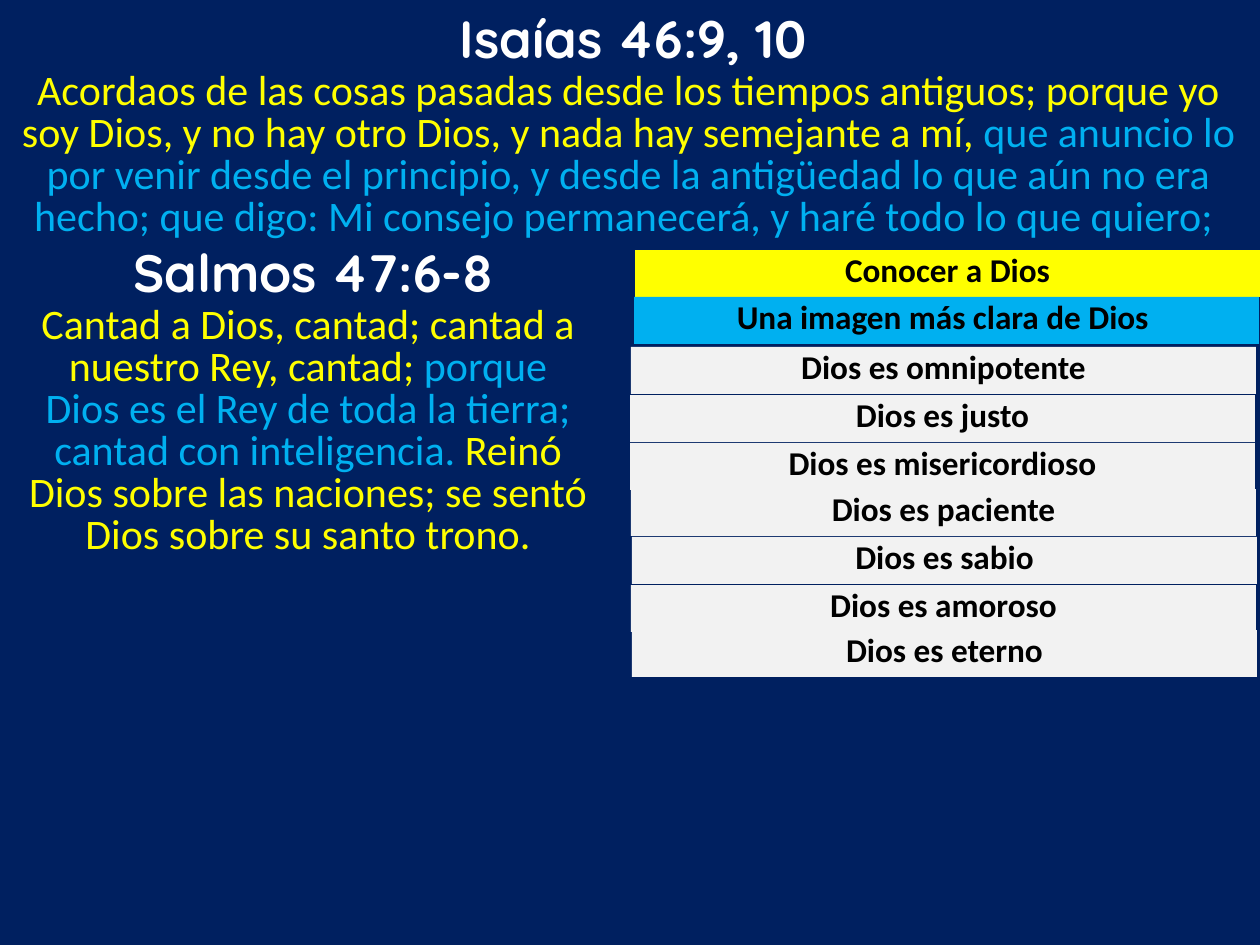
from pptx import Presentation
from pptx.dml.color import RGBColor
from pptx.enum.shapes import MSO_SHAPE
from pptx.enum.text import MSO_ANCHOR, MSO_AUTO_SIZE, PP_ALIGN
from pptx.util import Emu, Pt

PX = 914400 / 126
COLORS = {
    "navy": "002060",
    "white": "FFFFFF",
    "yellow": "FFFF00",
    "blue": "00B0F0",
    "gray": "F2F2F2",
    "black": "000000",
}
ISAIAH = [
    ("Acordaos de las cosas pasadas desde los tiempos antiguos; porque yo soy Dios, "
     "y no hay otro Dios, y nada hay semejante a mí, ", "yellow"),
    ("que anuncio lo por venir desde el principio, y desde la antigüedad lo que aún no era "
     "hecho; que digo: Mi consejo permanecerá, y haré todo lo que quiero; ", "blue"),
]
PSALM = [
    ("Cantad a Dios, cantad; cantad a nuestro Rey, cantad; ", "yellow"),
    ("porque Dios es el Rey de toda la tierra; cantad con inteligencia. ", "blue"),
    ("Reinó Dios sobre las naciones; se sentó Dios sobre su santo trono.", "yellow"),
]
TOPICS = [
    ("Conocer a Dios", "yellow", 5, 0),
    ("Una imagen más clara de Dios ", "blue", 4, 47),
    ("Dios es omnipotente", "gray", 1, 97),
    ("Dios es justo", "gray", 0, 145),
    ("Dios es misericordioso", "gray", 0, 193),
    ("Dios es paciente", "gray", 1, 239),
    ("Dios es sabio", "gray", 2, 287),
    ("Dios es amoroso", "gray", 1, 335),
    ("Dios es eterno", "gray", 2, 380),
]


def color(name):
    return RGBColor.from_string(COLORS[name])


def emu(*lengths):
    return [Emu(round(n * PX)) for n in lengths]


def place(sp, box):
    sp.left, sp.top, sp.width, sp.height = emu(*box)


def write(sp, parts, font, size, bold=False, spacing=None, anchor=MSO_ANCHOR.TOP):
    tf = sp.text_frame
    tf.word_wrap = True
    tf.auto_size = MSO_AUTO_SIZE.NONE
    tf.vertical_anchor = anchor
    p = tf.paragraphs[0]
    p.alignment = PP_ALIGN.CENTER
    p.line_spacing = spacing or 1.0
    for text, name in parts:
        r = p.add_run()
        r.text = text
        r.font.name = font
        r.font.size = Pt(size)
        r.font.bold = bold
        r.font.color.rgb = color(name)


def add_heading(sp, box, text):
    place(sp, box)
    write(sp, [(text, "white")], "Quicksand", 30, bold=True)


def add_verse(slide, box, parts):
    sp = slide.shapes.add_textbox(*emu(*box))
    write(sp, parts, "Calibri", 24, spacing=Pt(24))


def add_topics(slide, box):
    x, y, w, h = box
    for text, fill, dx, dy in TOPICS:
        sp = slide.shapes.add_shape(MSO_SHAPE.RECTANGLE, *emu(x + dx, y + dy, w, h))
        sp.shadow.inherit = False
        sp.fill.solid()
        sp.fill.fore_color.rgb = color(fill)
        sp.line.fill.background()
        write(sp, [(text, "black")], "Calibri", 19, bold=True, spacing=Pt(19))


def main():
    prs = Presentation()
    prs.slide_width, prs.slide_height = emu(1260, 945)
    slide = prs.slides.add_slide(prs.slide_layouts[5])
    slide.background.fill.solid()
    slide.background.fill.fore_color.rgb = color("navy")

    add_heading(slide.shapes.title, (333, 0, 586, 77), " Isaías 46:9, 10")
    add_verse(slide, (0, 66, 1257, 183), ISAIAH)
    add_topics(slide, (630, 250, 625, 47))
    psalm_box = (13, 234, 586, 140)
    add_heading(slide.shapes.add_textbox(*emu(*psalm_box)), psalm_box, " Salmos 47:6-8")
    add_verse(slide, (15, 300, 586, 268), PSALM)
    prs.save("out.pptx")


if __name__ == "__main__":
    main()
